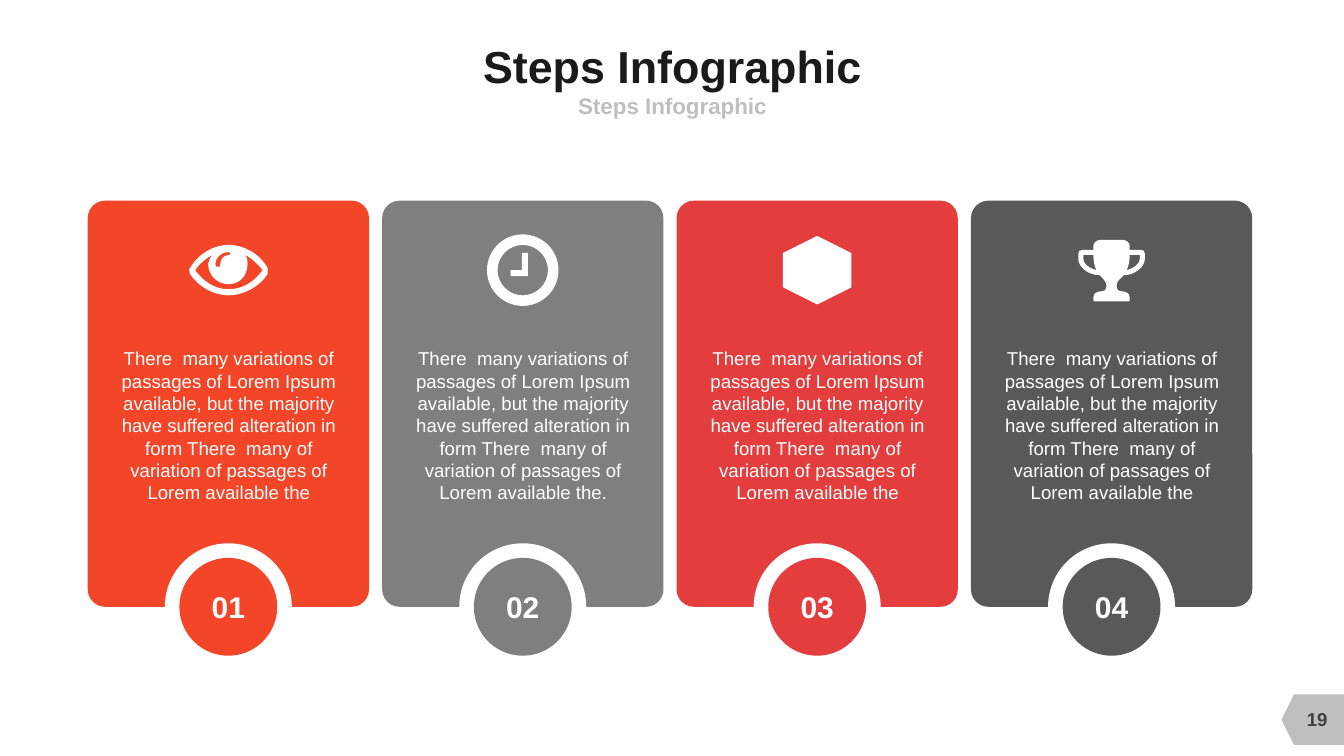
from dataclasses import dataclass
from lxml.etree import SubElement
from pptx import Presentation
from pptx.dml.color import RGBColor as Rgb
from pptx.enum.shapes import MSO_SHAPE as Kind
from pptx.enum.text import MSO_ANCHOR as Anchor, MSO_AUTO_SIZE as Fit, PP_ALIGN as Align
from pptx.oxml.ns import qn
from pptx.util import Inches, Pt


@dataclass(frozen=True)
class Theme:
    font: str = "Arial"
    white: str = "FFFFFF"
    dark: str = "1A1A1A"
    pale: str = "BFBFBF"
    page: str = "404040"
    title: float = 32
    sub: float = 16
    badge: float = 21.4
    text: float = 13.3


T = Theme()
TITLE = "Steps Infographic"
SUB = "Steps Infographic"
PAGE = "19"
LOREM = ("There  many variations of passages of Lorem Ipsum available, "
         "but the majority have suffered alteration in form There  many of "
         "variation of passages of Lorem available the")
STEPS = [
    ("01", "F34629", LOREM, "eye"),
    ("02", "7F7F7F", LOREM + ".", "clock"),
    ("03", "E33D3D", LOREM, "hexagon"),
    ("04", "595959", LOREM, "trophy"),
]

LID = [(39, 73), (31, 85, 16, 94, 0, 94), (-15, 94, -30, 85, -38, 73),
       (-38, 71, -39, 70, -39, 69), (-39, 68, -38, 67, -38, 67),
       (-30, 53, -15, 44, 0, 44), (16, 44, 31, 53, 39, 67),
       (39, 67, 39, 68, 39, 69), (39, 70, 39, 71, 39, 73)]
GAP = [(17, 54), (19, 57, 19, 60, 19, 63), (19, 75, 11, 83, 0, 83),
       (-10, 83, -20, 75, -20, 63), (-20, 60, -18, 57, -16, 54),
       (-23, 58, -29, 63, -33, 69), (-25, 80, -14, 88, 0, 88),
       (15, 88, 26, 80, 34, 69), (29, 63, 24, 58, 17, 54)]
GLINT = [(0, 51), (-7, 51, -13, 57, -13, 63), (-13, 65, -12, 66, -10, 66),
         (-9, 66, -8, 65, -8, 63), (-8, 59, -5, 54, 0, 54),
         (1, 54, 2, 54, 2, 53), (2, 52, 1, 51, 0, 51)]
HAND = [(5, 52), (5, 75), (-12, 75), (-12, 69), (-1, 69), (-1, 52)]
CUP = [(0, 39), (11, 39), (15, 39, 18, 42, 18, 45), (18, 49), (29, 49),
       (32, 49, 33, 50, 33, 53), (33, 58), (33, 65, 24, 74, 12, 74),
       (10, 76, 8, 78, 8, 78), (6, 80, 5, 82, 5, 85), (5, 87, 6, 90, 10, 90),
       (14, 90, 18, 92, 18, 96), (18, 99), (18, 100, 17, 100, 17, 100), (0, 100)]
GRIP = [(28, 54), (18, 54), (18, 60, 17, 65, 15, 69), (23, 67, 28, 62, 28, 58)]

LEFT, TOP, WIDE, HIGH, PITCH = 0.87, 1.99, 2.79, 4.03, 2.92
MID = 0.69


def pairs(part):
    return list(zip(part[::2], part[1::2]))


def flip(curve):
    x, y = curve[-1][-2:]
    out = [(-x, y)]
    for prev, part in reversed(list(zip(curve, curve[1:]))):
        pts = pairs(part)[-2::-1] if len(part) > 2 else []
        pts.append(prev[-2:])
        out.append(tuple(v for a, b in pts for v in (-a, b)))
    return out


def ring(r):
    y, k = 100 * MID, 0.55 * r
    return [(0, y - r), (k, y - r, r, y - k, r, y), (r, y + k, k, y + r, 0, y + r),
            (-k, y + r, -r, y + k, -r, y), (-r, y - k, -k, y - r, 0, y - r)]


ICONS = {
    "eye": [LID, GAP, GLINT],
    "clock": [ring(35.5), ring(25), HAND],
    "trophy": [CUP + flip(CUP)[1:], GRIP, flip(GRIP)],
}


def paint(shape, color):
    shape.shadow.inherit = False
    shape.fill.solid()
    shape.fill.fore_color.rgb = Rgb.from_string(color)
    shape.line.fill.background()


def block(shapes, kind, box, color):
    shape = shapes.add_shape(kind, *map(Inches, box))
    paint(shape, color)
    return shape


def disc(shapes, x, y, size, color):
    return block(shapes, Kind.OVAL, (x - size / 2, y - size / 2, size, size), color)


def write(shape, text, size, color, bold=True, wrap=True, inset=0):
    frame = shape.text_frame
    frame.auto_size = Fit.NONE
    frame.word_wrap = wrap
    frame.vertical_anchor = Anchor.MIDDLE
    frame.margin_left = frame.margin_right = Inches(inset)
    frame.margin_top = frame.margin_bottom = Inches(inset)
    para = frame.paragraphs[0]
    para.alignment = Align.CENTER
    run = para.add_run()
    run.text = text
    run.font.name, run.font.size, run.font.bold = T.font, Pt(size), bold
    run.font.color.rgb = Rgb.from_string(color)
    return para


def place(shape, *box):
    shape.left, shape.top, shape.width, shape.height = map(Inches, box)


def draw(shapes, loops, x, y):
    def spot(point):
        return Inches(x + point[0] / 100), Inches(y + point[1] / 100)

    pen = shapes.build_freeform(*spot(loops[0][0]))
    for i, loop in enumerate(loops):
        if i:
            pen.move_to(*spot(loop[0]))
        pen.add_line_segments([spot(part[-2:]) for part in loop[1:]])
    shape = pen.convert_to_shape()
    paint(shape, T.white)
    parts = [part for loop in loops for part in loop[1:]]
    lines = list(shape._element.iter(qn("a:lnTo")))
    for line, part in zip(lines, parts):
        if len(part) > 2:
            bend(line, [spot(p) for p in pairs(part)], shape.left, shape.top)


def bend(line, pts, left, top):
    curve = line.makeelement(qn("a:cubicBezTo"))
    for a, b in pts:
        SubElement(curve, qn("a:pt"), x=str(a - left), y=str(b - top))
    line.getparent().replace(line, curve)


def card(shapes, x, step):
    label, color, text, icon = step
    mid, base = x + WIDE / 2, TOP + HIGH
    box = (mid - HIGH / 2, TOP + (HIGH - WIDE) / 2, HIGH, WIDE)
    panel = block(shapes, Kind.ROUNDED_RECTANGLE, box, color)
    panel.rotation = 270
    panel.adjustments[0] = 0.062
    badge = shapes.add_group_shape().shapes
    disc(badge, mid, base, 1.26, T.white)
    write(disc(badge, mid, base, 0.97, color), label, T.badge, T.white)
    if icon in ICONS:
        draw(shapes, ICONS[icon], mid, TOP)
    else:
        size = 0.68
        box = (mid - size / 2, TOP + MID - size / 2, size, size)
        block(shapes, Kind.HEXAGON, box, T.white).rotation = 90
    note = shapes.add_textbox(*map(Inches, (mid - 1.14, 3.41, 2.29, 1.62)))
    write(note, text, T.text, T.white, bold=False)


def main():
    deck = Presentation()
    deck.slide_width, deck.slide_height = Inches(13.33), Inches(7.5)
    slide = deck.slides.add_slide(deck.slide_layouts[1])
    shapes = slide.shapes

    place(shapes.title, 2.56, 0.39, 8.22, 0.52)
    write(shapes.title, TITLE, T.title, T.dark, wrap=False)
    body = slide.placeholders[1]
    place(body, 3.67, 0.9, 6, 0.29)
    props = write(body, SUB, T.sub, T.pale)._p.get_or_add_pPr()
    props.set("marL", "0")
    props.set("indent", "0")
    SubElement(props, qn("a:buNone"))

    tag = block(shapes, Kind.FLOWCHART_OFFPAGE_CONNECTOR, (12.77, 6.83, 0.5, 0.62), T.pale)
    tag.rotation = 90
    page = shapes.add_textbox(*map(Inches, (12.73, 6.93, 0.67, 0.4)))
    write(page, PAGE, T.text, T.page, inset=0.05)

    for i, step in enumerate(STEPS):
        card(shapes, LEFT + i * PITCH, step)
    deck.save("out.pptx")


if __name__ == "__main__":
    main()
